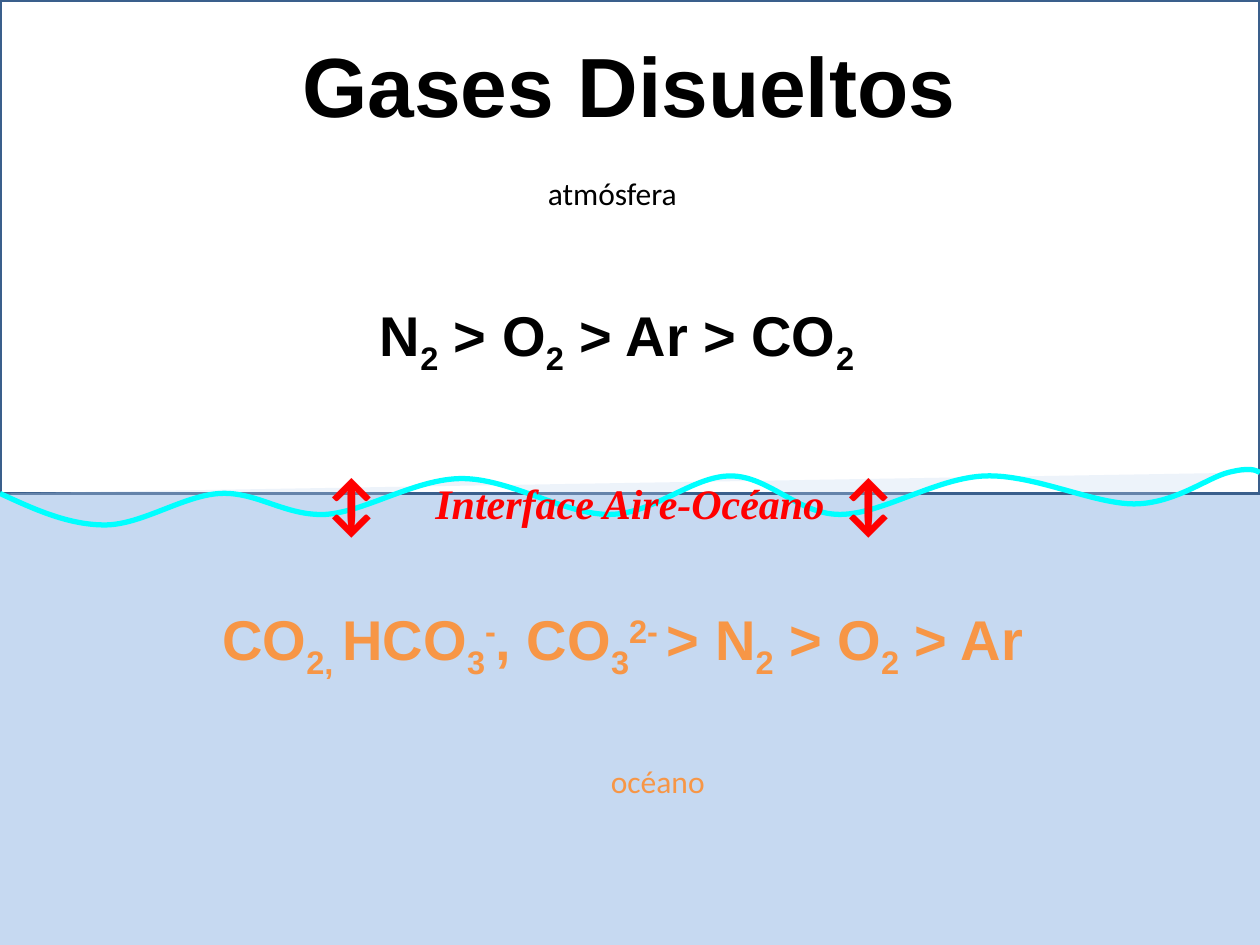
"""Build the slide on dissolved gases in air and ocean."""
from lxml import etree
from pptx import Presentation
from pptx.dml.color import RGBColor
from pptx.enum.shapes import MSO_SHAPE
from pptx.enum.text import MSO_ANCHOR, MSO_AUTO_SIZE, PP_ALIGN
from pptx.oxml.ns import qn
from pptx.util import Pt

RECT = MSO_SHAPE.RECTANGLE
LEFT, CENTER = PP_ALIGN.LEFT, PP_ALIGN.CENTER
TOP, MIDDLE = MSO_ANCHOR.TOP, MSO_ANCHOR.MIDDLE
GROW, FIXED = MSO_AUTO_SIZE.SHAPE_TO_FIT_TEXT, MSO_AUTO_SIZE.NONE
TITLE_ONLY = 5
WIDE, HIGH = 720, 540
HEX = {"sea": "C6D9F1", "air": "FFFFFF", "edge": "3A5F8C", "wave": "00FFFF",
       "ink": "000000", "warm": "F79646", "red": "FF0000"}
SHIFT = {"_": "-25000", "^": "30000"}
WAVE = [(0, 282), (19.5, 291), (39, 300), (60, 300), (81, 300), (105, 283), (126, 282),
        (147, 281), (163, 295), (186, 294), (209, 292.5), (237.5, 273.5), (264, 273.5),
        (291.5, 273.5), (322.5, 294), (348, 294), (373.5, 294), (395.5, 272), (417.5, 272),
        (439.5, 272), (456, 294), (480, 294), (504, 294), (535, 273), (563, 272),
        (590.5, 271), (625, 288), (648, 288), (671, 288), (690, 273), (702, 270),
        (714, 267), (717, 268.5), (720, 270)]


def tint(name):
    """Return the named colour."""
    return RGBColor.from_string(HEX[name])


def write(frame, text, font="Calibri", size=18, color="ink", bold=False,
          italic=False, align=LEFT, anchor=TOP, wrap=True, fit=GROW):
    """Fill a frame; bars split runs, a leading _ lowers one and ^ raises it."""
    frame.word_wrap, frame.auto_size, frame.vertical_anchor = wrap, fit, anchor
    para = frame.paragraphs[0]
    para.alignment = align
    for part in text.split("|"):
        run = para.add_run()
        run.text = part.lstrip("_^")
        face = run.font
        face.name, face.size, face.bold, face.italic = font, Pt(size), bold, italic
        face.color.rgb = tint(color)
        if part[0] in SHIFT:
            run._r.get_or_add_rPr().set("baseline", SHIFT[part[0]])


class Deck:
    """Hold the style and the current slide."""

    def __init__(self):
        """Start a deck with one slide."""
        self.show = Presentation()
        self.show.slide_width, self.show.slide_height = Pt(WIDE), Pt(HIGH)
        self.slide = self.show.slides.add_slide(self.show.slide_layouts[TITLE_ONLY])
        self.shapes = self.slide.shapes
        back = self.slide.background.fill
        back.solid()
        back.fore_color.rgb = tint("sea")

    def paint(self, shape, fill, line, width):
        """Set fill and line and drop the shadow."""
        shape.shadow.inherit = False
        shape.fill.solid()
        shape.fill.fore_color.rgb = tint(fill)
        shape.line.color.rgb = tint(line)
        shape.line.width = Pt(width)

    def panel(self, box, fill, line, width):
        """Add a plain rectangle."""
        shape = self.shapes.add_shape(RECT, *map(Pt, box))
        self.paint(shape, fill, line, width)

    def title(self, box, text, **form):
        """Place the title in front of the panel."""
        shape = self.shapes.title
        self.shapes._spTree.append(shape._element)
        shape.left, shape.top, shape.width, shape.height = map(Pt, box)
        write(shape.text_frame, text, **form)

    def label(self, box, text, turn=0, **form):
        """Add a text box."""
        shape = self.shapes.add_textbox(*map(Pt, box))
        shape.rotation = turn
        write(shape.text_frame, text, **form)

    def wave(self, points, fill, line, width, alpha, text, **form):
        """Add a filled curve with text; points are a start, then Bezier triples."""
        spots = [(Pt(x), Pt(y)) for x, y in points]
        pen = self.shapes.build_freeform(*spots[0])
        pen.add_line_segments(spots[1:], close=False)
        shape = pen.convert_to_shape()
        self.paint(shape, fill, line, width)
        route = next(shape._element.iter(qn("a:path")))
        steps = route.findall(qn("a:lnTo"))
        for start in range(0, len(steps), 3):
            curve = etree.SubElement(route, qn("a:cubicBezTo"))
            for step in steps[start:start + 3]:
                curve.append(step[0])
                route.remove(step)
        color = next(shape._element.spPr.iter(qn("a:srgbClr")))
        etree.SubElement(color, qn("a:alpha")).set("val", str(alpha * 1000))
        shape.text_frame.margin_top = Pt(5.8)
        write(shape.text_frame, text, **form)


def main():
    """Draw the slide and save it."""
    deck = Deck()
    deck.panel((0, 0, WIDE, 282), "air", "edge", 2)
    deck.title((68.4, 6, 582, 84), "Gases Disueltos", font="Arial", size=48,
               bold=True, align=CENTER, anchor=MIDDLE, fit=FIXED)
    gas = {"font": "Arial", "size": 32, "bold": True}
    deck.label((210, 168, 312, 45.6), "N|_2| > O|_2| > Ar > CO|_2", **gas)
    deck.label((120, 342, 522, 45.6),
               "CO|_2, |HCO|_3|^-|, CO|_3|^2- |> N|_2| > O|_2| > Ar",
               color="warm", **gas)
    deck.wave(WAVE, "sea", "wave", 3, 30, "Interface Aire-Océano",
              font="Times New Roman", size=24, color="red", bold=True,
              italic=True, align=CENTER, fit=FIXED)
    for left in (147.6, 442.8):
        deck.label((left, 262.8, 114, 55.6), "↔", turn=90, size=40,
                   color="red", bold=True, align=CENTER)
    deck.label((306, 96, 89, 29), "atmósfera", wrap=False)
    deck.label((342, 432, 69, 29), "océano", color="warm", wrap=False)
    deck.show.save("out.pptx")


if __name__ == "__main__":
    main()
